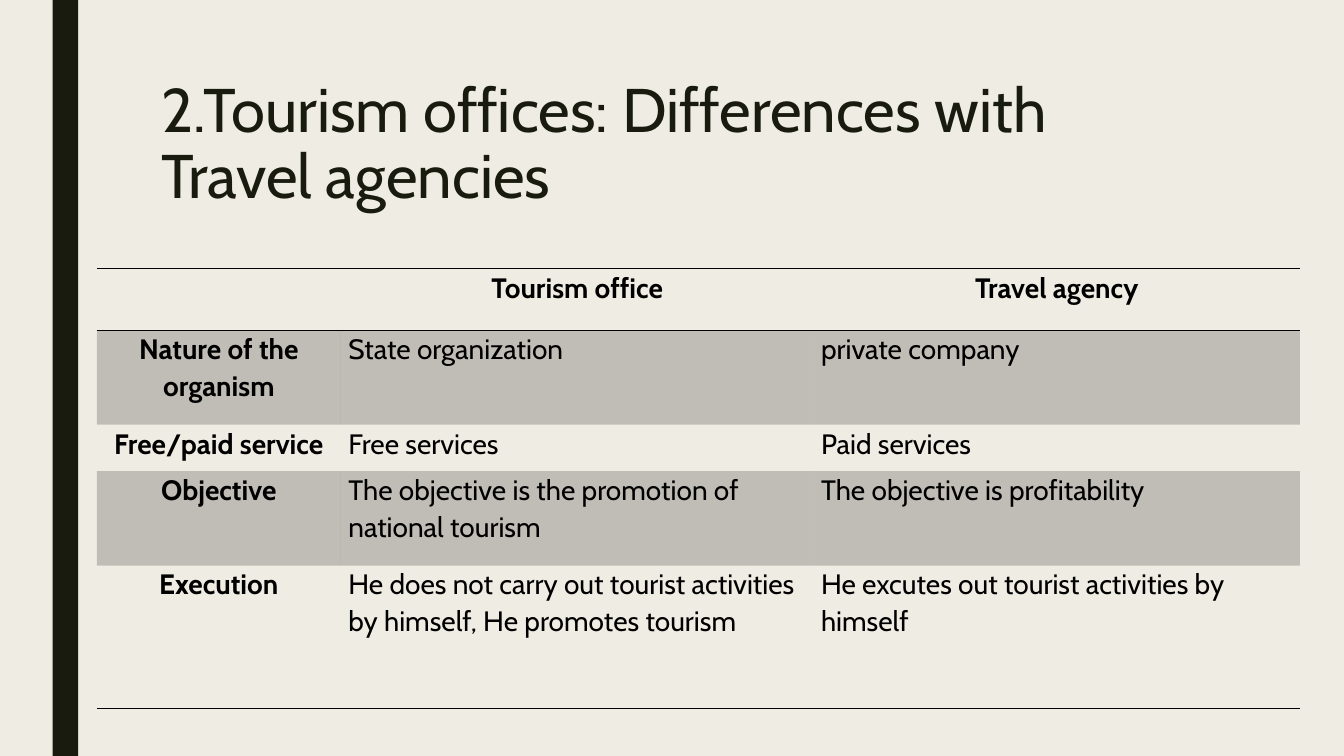
"""Build a slide comparing tourism offices with travel agencies."""
from dataclasses import dataclass

from lxml.etree import SubElement
from pptx import Presentation
from pptx.dml.color import RGBColor
from pptx.enum.shapes import MSO_SHAPE
from pptx.enum.text import MSO_ANCHOR, PP_ALIGN
from pptx.oxml import parse_xml
from pptx.oxml.ns import nsdecls, qn
from pptx.util import Cm, Pt


@dataclass
class Theme:
    """Colours, font and type sizes."""
    paper: RGBColor = RGBColor.from_string("EFEDE3")
    dark: RGBColor = RGBColor.from_string("191B0E")
    black: RGBColor = RGBColor.from_string("000000")
    font: str = "Cabin"
    title: Pt = Pt(44)
    body: Pt = Pt(20)


theme = Theme()


def style(para, size, color, bold=False):
    """Format every run of a paragraph."""
    for run in para.runs:
        run.font.name = theme.font
        run.font.size = size
        run.font.bold = bold
        run.font.color.rgb = color


def rule(cell, side):
    """Draw a one-point line on one side of a cell."""
    line = parse_xml(
        f'<a:{side} {nsdecls("a")} w="{Pt(1)}"><a:solidFill>'
        f'<a:srgbClr val="{theme.black}"/></a:solidFill></a:{side}>')
    cell._tc.get_or_add_tcPr().insert(0, line)


deck = Presentation()
deck.slide_width, deck.slide_height = Cm(33.87), Cm(19.05)
slide = deck.slides.add_slide(deck.slide_layouts[6])
slide.background.fill.solid()
slide.background.fill.fore_color.rgb = theme.paper

bar = slide.shapes.add_shape(
    MSO_SHAPE.RECTANGLE, Cm(1.33), 0, Cm(0.64), deck.slide_height)
bar.shadow.inherit = False
bar.fill.solid()
bar.fill.fore_color.rgb = theme.dark
bar.line.fill.background()

title = slide.shapes.add_textbox(Cm(3.81), Cm(1.9), Cm(26.67), Cm(4.11))
frame = title.text_frame
frame.word_wrap = True
frame.vertical_anchor = MSO_ANCHOR.TOP
frame.text = "2.Tourism offices: Differences with Travel agencies"
frame.paragraphs[0].line_spacing = 0.89
style(frame.paragraphs[0], theme.title, theme.dark)

rows = [
    ("", "Tourism office", "Travel agency"),
    ("Nature of the organism", "State organization", "private company"),
    ("Free/paid service", "Free services", "Paid services"),
    ("Objective", "The objective is the promotion of national tourism",
     "The objective is profitability"),
    ("Execution", "He does not carry out tourist activities by himself, "
     "He promotes tourism", "He excutes out tourist activities by himself"),
]
widths = [6.15, 11.91, 12.26]
heights = [1.55, 2.38, 1.17, 2.38, 3.6]
table = slide.shapes.add_table(
    len(rows), len(widths), Cm(2.44), Cm(6.77),
    Cm(sum(widths)), Cm(sum(heights))).table
table.first_row = table.horz_banding = False
look = table._tbl.tblPr.find(qn("a:tableStyleId"))
look.text = "{2D5ABB26-0587-4C30-8999-92F81FD0307C}"
for col, width in zip(table.columns, widths):
    col.width = Cm(width)
for row, height in zip(table.rows, heights):
    row.height = Cm(height)

for r, texts in enumerate(rows):
    for c, text in enumerate(texts):
        cell = table.cell(r, c)
        cell.margin_left = cell.margin_right = Cm(0.19)
        cell.margin_top = cell.margin_bottom = 0
        head = r == 0 or c == 0
        cell.text_frame.text = text
        para = cell.text_frame.paragraphs[0]
        para.line_spacing = 1.07
        para.alignment = PP_ALIGN.CENTER if head else PP_ALIGN.LEFT
        style(para, theme.body, theme.black, head)
        if r % 2:
            cell.fill.solid()
            cell.fill.fore_color.rgb = theme.black
            tint = cell._tc.tcPr.find(".//" + qn("a:srgbClr"))
            SubElement(tint, qn("a:alpha"), val="20000")
        else:
            cell.fill.background()
        if r in (0, len(rows) - 1):
            rule(cell, "lnB")
        if r == 0:
            rule(cell, "lnT")

deck.save("out.pptx")
